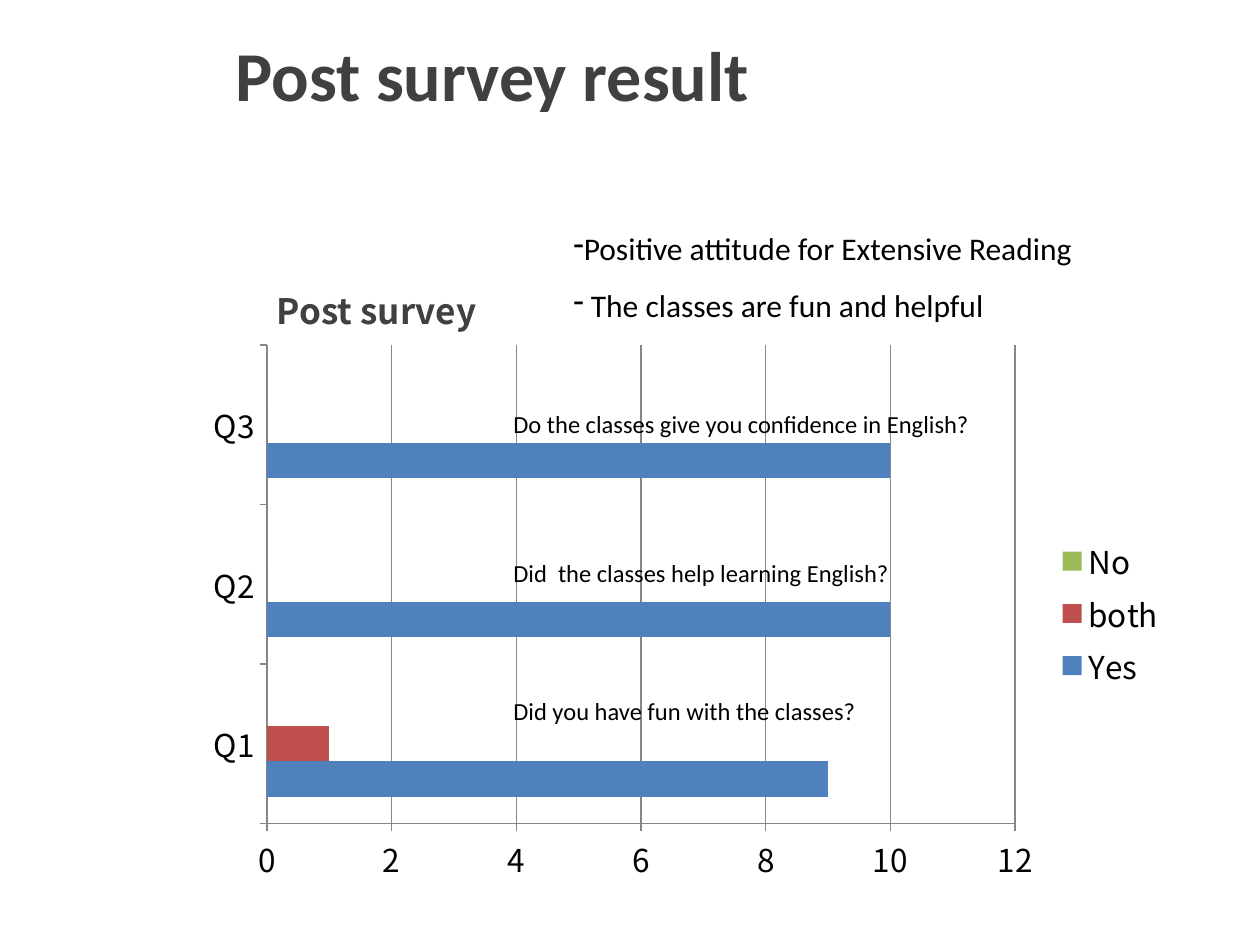
from pptx import Presentation
from pptx.chart.data import CategoryChartData
from pptx.dml.color import RGBColor
from pptx.enum.chart import XL_CHART_TYPE, XL_LEGEND_POSITION, XL_TICK_MARK
from pptx.enum.text import MSO_ANCHOR
from pptx.oxml.ns import qn
from pptx.util import Emu, Pt
from lxml import etree

BAR = XL_CHART_TYPE.BAR_CLUSTERED
RIGHT = XL_LEGEND_POSITION.RIGHT
OUTSIDE = XL_TICK_MARK.OUTSIDE
TOP, MIDDLE = MSO_ANCHOR.TOP, MSO_ANCHOR.MIDDLE

BLACK = RGBColor(0x00, 0x00, 0x00)
CHARCOAL = RGBColor(0x40, 0x40, 0x40)
GRAY = RGBColor(0x86, 0x86, 0x86)
BLUE = RGBColor(0x4F, 0x81, 0xBD)
RED = RGBColor(0xC0, 0x50, 0x4D)
GREEN = RGBColor(0x9B, 0xBB, 0x59)

LATIN = "Calibri"
KOREAN = "Noto Sans CJK KR"

QUESTIONS = ["Q1", "Q2", "Q3"]
ANSWERS = [
    ("Yes", (9, 10, 10), BLUE),
    ("both", (1, 0, 0), RED),
    ("No", (0, 0, 0), GREEN),
]
QUESTION_NOTES = [
    (690, "Did you have fun with the classes?"),
    (552, "Did  the classes help learning English?"),
    (403, "Do the classes give you confidence in English?"),
]
FINDINGS = ["Positive attitude for Extensive Reading", " The classes are fun and helpful"]


def px(length):
    return Emu(round(length * 914400 / 126))


def add_dash(para):
    properties = para._p.get_or_add_pPr()
    properties.set("marL", "0")
    properties.set("indent", "0")
    etree.SubElement(properties, qn("a:buChar")).set("char", "-")


def add_text(page, place, lines, size, color=BLACK, font=LATIN, bold=False,
             anchor=TOP, left_inset=None, spacing=None, dashed=False):
    box = page.shapes.add_textbox(*map(px, place))
    frame = box.text_frame
    frame.word_wrap = True
    frame.vertical_anchor = anchor
    if left_inset is not None:
        frame.margin_left = px(left_inset)
    for index, line in enumerate(lines):
        para = frame.add_paragraph() if index else frame.paragraphs[0]
        if spacing:
            para.line_spacing = spacing
        if dashed:
            add_dash(para)
        span = para.add_run()
        span.text = line
        span.font.size = Pt(size)
        span.font.name = font
        span.font.bold = bold
        span.font.color.rgb = color


def style_axis(axis):
    axis.major_tick_mark = OUTSIDE
    axis.minor_tick_mark = XL_TICK_MARK.NONE
    axis.format.line.color.rgb = GRAY
    axis.format.line.width = Pt(0.75)


def add_survey_chart(page, place):
    data = CategoryChartData()
    data.categories = QUESTIONS
    for name, values, _ in ANSWERS:
        data.add_series(name, values)
    chart = page.shapes.add_chart(BAR, *map(px, place), data).chart
    chart.has_title = False
    chart.font.size = Pt(18)
    chart.font.name = KOREAN
    chart.font.color.rgb = BLACK

    # Axes and gridlines
    style_axis(chart.category_axis)
    chart.category_axis.has_major_gridlines = False
    scale = chart.value_axis
    style_axis(scale)
    scale.minimum_scale, scale.maximum_scale, scale.major_unit = 0, 12, 2
    scale.has_major_gridlines = True
    scale.major_gridlines.format.line.color.rgb = GRAY
    scale.major_gridlines.format.line.width = Pt(0.75)

    # Legend
    chart.has_legend = True
    chart.legend.position = RIGHT
    chart.legend.include_in_layout = False

    # Bars
    plot = chart.plots[0]
    plot.gap_width = 150
    plot.vary_by_categories = False
    for series, (_, _, color) in zip(plot.series, ANSWERS):
        series.format.fill.solid()
        series.format.fill.fore_color.rgb = color


def main():
    deck = Presentation()
    deck.slide_width, deck.slide_height = px(1260), px(945)
    page = deck.slides.add_slide(deck.slide_layouts[6])

    # Title
    add_text(page, (223, 0, 1037, 147), ["Post survey result"], 40, CHARCOAL,
             bold=True, anchor=MIDDLE)

    # Chart with the question beside each group of bars
    add_survey_chart(page, (194, 334, 985, 559))
    for top, question in QUESTION_NOTES:
        add_text(page, (501, top, 556, 43), [question], 14)

    # Findings and chart heading
    add_text(page, (561, 204, 784, 121), FINDINGS, 18, spacing=1.5, dashed=True)
    add_text(page, (223, 283, 905, 572), ["Post survey"], 20, CHARCOAL, KOREAN,
             bold=True, left_inset=54)

    deck.save("out.pptx")


if __name__ == "__main__":
    main()
